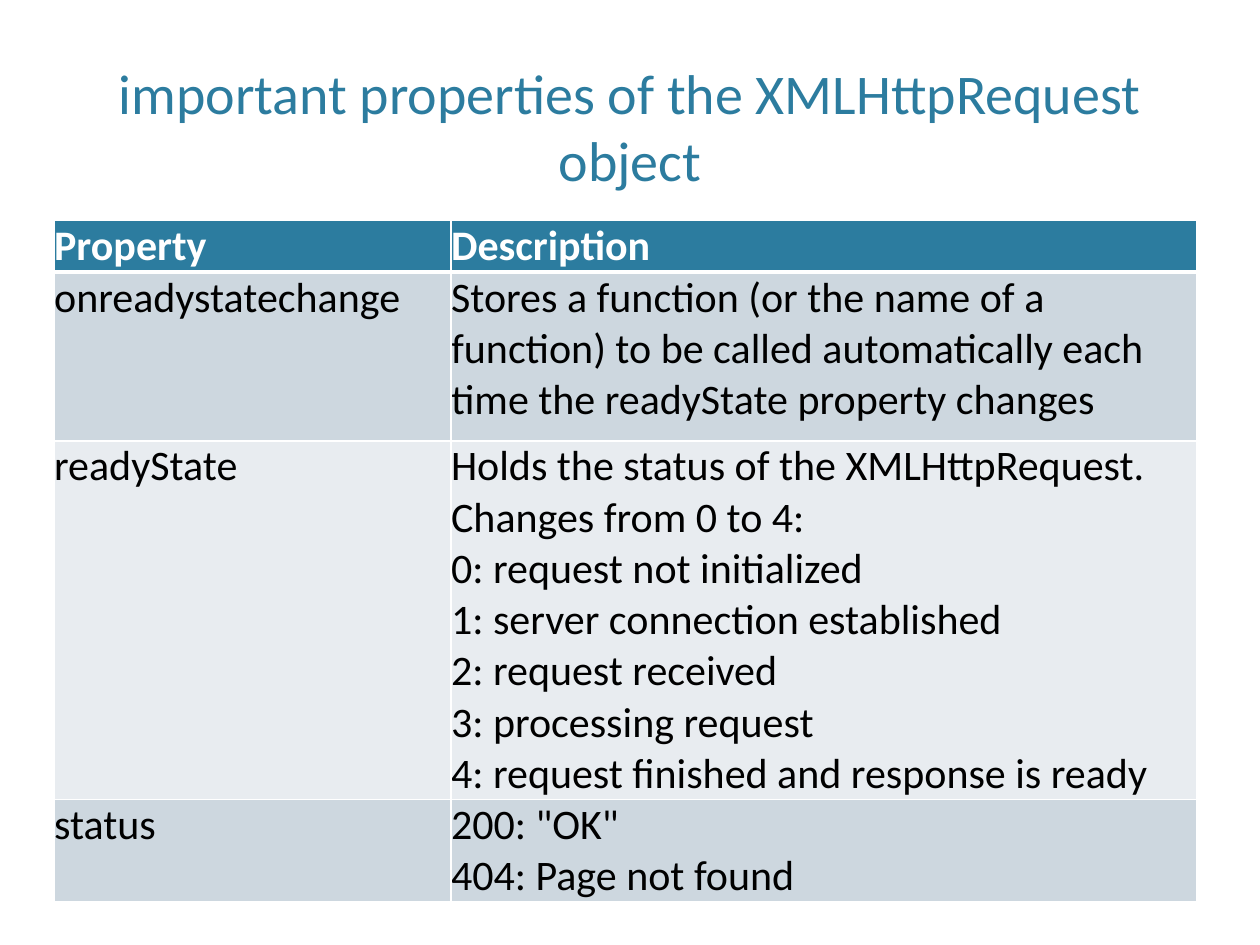
from lxml import etree
from pptx import Presentation
from pptx.dml.color import RGBColor
from pptx.enum.text import MSO_ANCHOR, PP_ALIGN
from pptx.oxml.ns import qn
from pptx.util import Inches, Pt

BOTTOM, TOP = MSO_ANCHOR.BOTTOM, MSO_ANCHOR.TOP
CENTER, LEFT = PP_ALIGN.CENTER, PP_ALIGN.LEFT

FONT = "Calibri"
TEAL, WHITE, BLACK = "2C7C9F", "FFFFFF", "000000"
BANDS = ["CDD7DF", "E8ECF0"]

COLUMN_WIDTHS = [3.15, 5.92]
ROW_HEIGHTS = [0.41, 1.34, 2.68, 0.71]
ROWS = [
    ("Property", "Description"),
    ("onreadystatechange",
     "Stores a function (or the name of a function) to be called "
     "automatically each time the readyState property changes"),
    ("readyState",
     "Holds the status of the XMLHttpRequest. Changes from 0 to 4:\n"
     "0: request not initialized\n"
     "1: server connection established\n"
     "2: request received\n"
     "3: processing request\n"
     "4: request finished and response is ready"),
    ("status", '200: "OK"\n404: Page not found'),
]


def color(hex_value):
    return RGBColor.from_string(hex_value)


def set_text(tf, text, size=24, hex_value=BLACK, bold=False, align=LEFT):
    """Fill a text frame with one paragraph; newlines become line breaks."""
    tf.word_wrap = True
    p = tf.paragraphs[0]
    p.alignment = align
    for i, line in enumerate(text.split("\n")):
        if i:
            p.add_line_break()
        r = p.add_run()
        r.text = line
        r.font.name = FONT
        r.font.size = Pt(size)
        r.font.bold = bold
        r.font.color.rgb = color(hex_value)
    p.font.size = Pt(size)


def set_borders(cell, widths):
    """Draw white cell borders; they must come before the fill in tcPr."""
    tcPr = cell._tc.get_or_add_tcPr()
    for i, (side, width) in enumerate(widths.items()):
        ln = etree.Element(qn("a:ln" + side), w=str(Pt(width)))
        fill = etree.SubElement(ln, qn("a:solidFill"))
        etree.SubElement(fill, qn("a:srgbClr"), val=WHITE)
        tcPr.insert(i, ln)


def place_title(slide, left, top, width, height):
    title = slide.shapes.title
    title.left, title.top = Inches(left), Inches(top)
    title.width, title.height = Inches(width), Inches(height)
    title.text_frame.vertical_anchor = BOTTOM
    set_text(title.text_frame, "important properties of the XMLHttpRequest object",
             size=32, hex_value=TEAL, align=CENTER)


def place_table(slide, left, top, width, height):
    table = slide.shapes.add_table(
        len(ROWS), len(COLUMN_WIDTHS),
        Inches(left), Inches(top), Inches(width), Inches(height)).table
    for column, w in zip(table.columns, COLUMN_WIDTHS):
        column.width = Inches(w)
    for row, h in zip(table.rows, ROW_HEIGHTS):
        row.height = Inches(h)

    for i, texts in enumerate(ROWS):
        header = i == 0
        for j, text in enumerate(texts):
            cell = table.cell(i, j)
            cell.margin_left = cell.margin_right = 0
            cell.margin_top = cell.margin_bottom = 0
            cell.vertical_anchor = TOP
            cell.fill.solid()
            cell.fill.fore_color.rgb = color(TEAL if header else BANDS[(i - 1) % 2])
            # The rule below the header is thicker
            set_borders(cell, {"L": 1, "R": 1, "T": 3 if i == 1 else 1,
                               "B": 3 if header else 1})
            set_text(cell.text_frame, text, bold=header,
                     hex_value=WHITE if header else BLACK)


def main():
    prs = Presentation()
    prs.slide_width, prs.slide_height = Inches(10), Inches(7.5)
    slide = prs.slides.add_slide(prs.slide_layouts[5])  # title only
    place_title(slide, 0.6, 0.12, 8.8, 1.46)
    place_table(slide, 0.43, 1.75, sum(COLUMN_WIDTHS), sum(ROW_HEIGHTS))
    prs.save("out.pptx")


if __name__ == "__main__":
    main()
